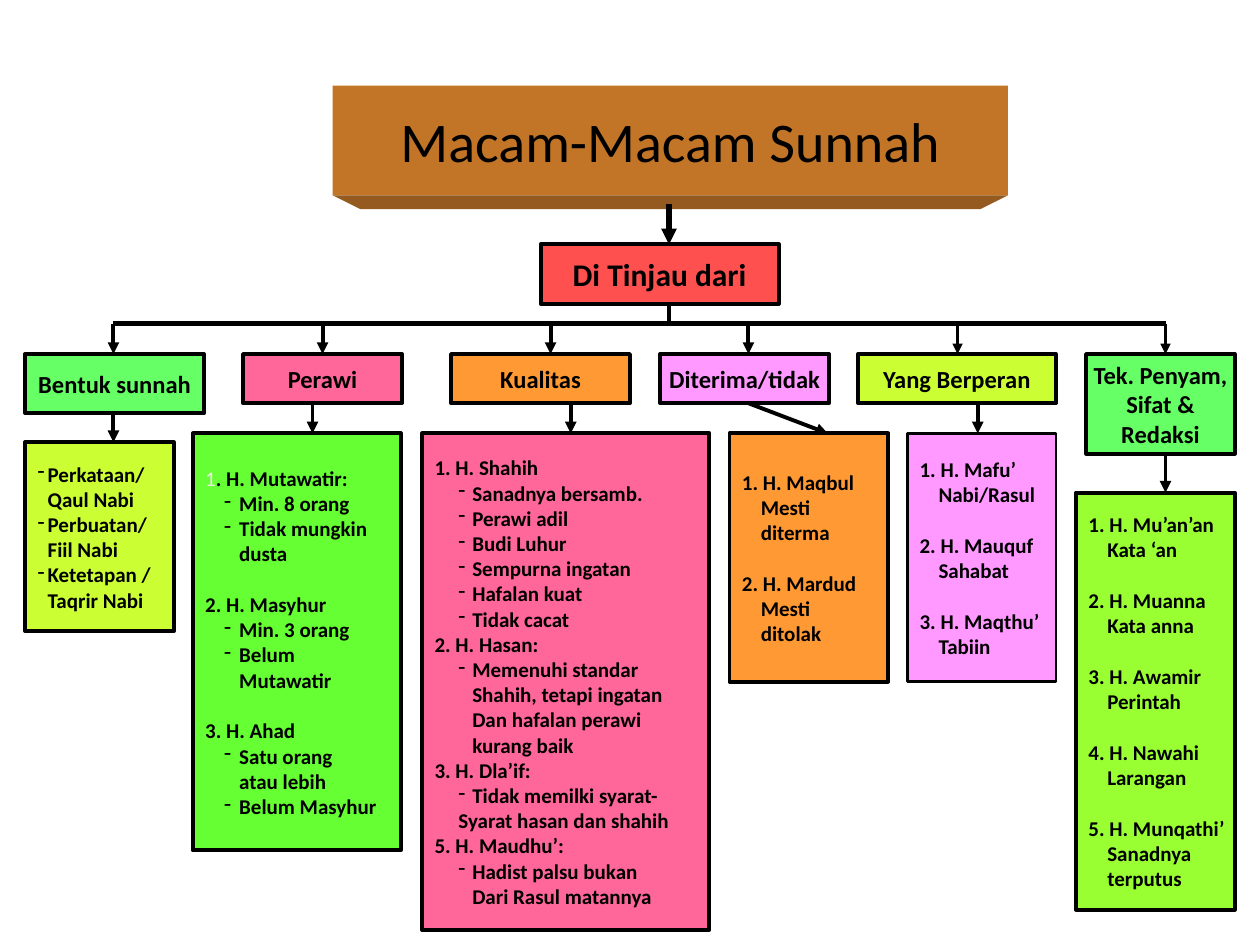
from dataclasses import dataclass
from lxml.etree import SubElement
from pptx import Presentation
from pptx.dml.color import RGBColor
from pptx.enum.shapes import MSO_CONNECTOR, MSO_SHAPE
from pptx.enum.text import MSO_ANCHOR, PP_ALIGN
from pptx.oxml.ns import qn
from pptx.util import Inches, Pt


@dataclass(frozen=True)
class Theme:
    font: str = "Calibri"
    ink: str = "000000"
    pale: str = "EEECE1"
    banner: str = "C27427"
    banner_edge: str = "945A1F"
    root: str = "FF5050"
    title_size: int = 32
    root_size: int = 18
    heading_size: int = 14
    body_size: int = 12
    group_gap: float = 14.6
    border: float = 2.25
    thick: float = 3
    thin: float = 1.5


THEME = Theme()
TITLE = "Macam-Macam Sunnah"
TITLE_BOX = (2.64, 0.68, 5.36, 0.87)
ROOT = "Di Tinjau dari"
ROOT_BOX = (4.29, 1.94, 1.89, 0.47)
CENTER_X, BUS_Y, HEADING_Y = 5.31, 2.57, 2.81

# Line kinds: "#" heading, "-" dashed item, ">" continuation, "=" aligned with dash.
BRANCHES = [
    dict(heading=["Bentuk sunnah"], box=(0.2, 1.42, 0.47), fill="66FF66",
         detail=(0.2, 3.51, 1.18, 1.5), detail_fill="CCFF33",
         drop=0.9, link=(0.9, 0.9), indents=(0, 0.08), lines=[
             "-Perkataan/", ">Qaul Nabi", "-Perbuatan/", ">Fiil Nabi",
             "-Ketetapan /", ">Taqrir Nabi"]),
    dict(heading=["Perawi"], box=(1.93, 1.26, 0.39), fill="FF6699",
         detail=(1.53, 3.44, 1.65, 3.31), detail_fill="66FF33",
         drop=2.56, link=(2.48, 2.48), indents=(0.15, 0.27), pale_number=True, lines=[
             "#1. H. Mutawatir:", "-Min. 8 orang", "-Tidak mungkin", ">dusta",
             "#2. H. Masyhur", "-Min. 3 orang", "-Belum", ">Mutawatir",
             "#3. H. Ahad", "-Satu orang", ">atau lebih", "-Belum Masyhur"]),
    dict(heading=["Kualitas"], box=(3.58, 1.42, 0.39), fill="FF9933",
         detail=(3.35, 3.44, 2.28, 3.94), detail_fill="FF6699",
         drop=4.37, link=(4.53, 4.53), indents=(0.19, 0.3), gap=0, lines=[
             "#1. H. Shahih", "-Sanadnya bersamb.", "-Perawi adil", "-Budi Luhur",
             "-Sempurna ingatan", "-Hafalan kuat", "-Tidak cacat",
             "#2. H. Hasan:", "-Memenuhi standar", ">Shahih, tetapi ingatan",
             ">Dan hafalan perawi", ">kurang baik",
             "#3. H. Dla’if:", "-Tidak memilki syarat-", "=Syarat hasan dan shahih",
             "#5. H. Maudhu’:", "-Hadist palsu bukan", ">Dari Rasul matannya"]),
    dict(heading=["Diterima/tidak"], box=(5.24, 1.34, 0.39), fill="FF99FF",
         detail=(5.79, 3.44, 1.26, 1.97), detail_fill="FF9933",
         drop=5.94, link=(5.94, 6.57), lines=[
             "#1. H. Maqbul", ">Mesti", ">diterma",
             "#2. H. Mardud", ">Mesti", ">ditolak"]),
    dict(heading=["Yang Berperan"], box=(6.81, 1.57, 0.39), fill="CCFF33",
         detail=(7.2, 3.44, 1.18, 1.97), detail_fill="FF99FF", detail_border=THEME.thin,
         drop=7.6, drop_width=THEME.thin, link=(7.76, 7.76), lines=[
             "#1. H. Mafu’", ">Nabi/Rasul", "#2. H. Mauquf", ">Sahabat",
             "#3. H. Maqthu’", ">Tabiin"]),
    dict(heading=["Tek. Penyam,", "Sifat &", "Redaksi"], box=(8.62, 1.18, 0.79),
         fill="66FF66", detail=(8.54, 3.91, 1.26, 3.31), detail_fill="99FF33",
         drop=9.25, drop_width=THEME.thin, link=(9.25, 9.25), lines=[
             "#1. H. Mu’an’an", ">Kata ‘an", "#2. H. Muanna", ">Kata anna",
             "#3. H. Awamir", ">Perintah", "#4. H. Nawahi", ">Larangan",
             "#5. H. Munqathi’", ">Sanadnya", ">terputus"]),
]


def color(value):
    return RGBColor.from_string(value)


def paint(shape, fill, border=None):
    shape.fill.solid()
    shape.fill.fore_color.rgb = color(fill)
    if border:
        shape.line.color.rgb = color(THEME.ink)
        shape.line.width = Pt(border)
    else:
        shape.line.fill.background()


def add_run(paragraph, text, size, bold=True, ink=THEME.ink):
    run = paragraph.add_run()
    run.text = text
    run.font.name = THEME.font
    run.font.size = Pt(size)
    run.font.bold = bold
    run.font.color.rgb = color(ink)


def paragraphs(frame, count):
    yield frame.paragraphs[0]
    for _ in range(count - 1):
        yield frame.add_paragraph()


def add_box(slide, box, fill, border=THEME.border):
    shape = slide.shapes.add_shape(MSO_SHAPE.RECTANGLE, *map(Inches, box))
    shape.shadow.inherit = False
    paint(shape, fill, border)
    shape.text_frame.vertical_anchor = MSO_ANCHOR.MIDDLE
    return shape.text_frame


def add_heading(slide, box, fill, lines, size):
    frame = add_box(slide, box, fill)
    frame.word_wrap = False
    for paragraph, text in zip(paragraphs(frame, len(lines)), lines):
        paragraph.alignment = PP_ALIGN.CENTER
        add_run(paragraph, text, size)


def add_detail(slide, branch):
    frame = add_box(slide, branch["detail"], branch["detail_fill"],
                    branch.get("detail_border", THEME.border))
    frame.word_wrap = True
    frame.margin_right = 0
    lines = branch["lines"]
    dash, text_left = branch.get("indents", (0.15, 0.15))
    for index, paragraph in enumerate(paragraphs(frame, len(lines))):
        kind, text = lines[index][0], lines[index][1:]
        left = {"#": 0, "=": dash}.get(kind, text_left)
        properties = paragraph._p.get_or_add_pPr()
        properties.set("marL", str(Inches(left)))
        properties.set("indent", str(Inches(dash - text_left) if kind == "-" else 0))
        if kind == "-":
            SubElement(properties, qn("a:buChar")).set("char", "-")
        else:
            SubElement(properties, qn("a:buNone"))
        paragraph.alignment = PP_ALIGN.LEFT
        if kind == "#" and index:
            paragraph.space_before = Pt(branch.get("gap", THEME.group_gap))
        if index == 0 and branch.get("pale_number"):
            add_run(paragraph, text[0], THEME.body_size, False, THEME.pale)
            text = text[1:]
        add_run(paragraph, text, THEME.body_size)


def add_line(slide, start, end, width=THEME.border, arrow=True):
    line = slide.shapes.add_connector(MSO_CONNECTOR.STRAIGHT, *map(Inches, start + end))
    line.line.color.rgb = color(THEME.ink)
    line.line.width = Pt(width)
    if arrow:
        SubElement(line.line._get_or_add_ln(), qn("a:tailEnd")).set("type", "triangle")
    SubElement(line._element.spPr, qn("a:effectLst"))


def add_banner(slide):
    title = slide.shapes.title
    title.left, title.top, title.width, title.height = map(Inches, TITLE_BOX)
    paint(title, THEME.banner)
    frame = title.text_frame
    frame.word_wrap = False
    frame.vertical_anchor = MSO_ANCHOR.MIDDLE
    frame.paragraphs[0].alignment = PP_ALIGN.CENTER
    add_run(frame.paragraphs[0], TITLE, THEME.title_size, False)
    left, top, width, height = TITLE_BOX
    right, bottom, inset, depth = left + width, top + height, 0.22, 0.11
    builder = slide.shapes.build_freeform(Inches(left), Inches(bottom))
    corners = [(right, bottom), (right - inset, bottom + depth), (left + inset, bottom + depth)]
    builder.add_line_segments([(Inches(x), Inches(y)) for x, y in corners], close=True)
    edge = builder.convert_to_shape()
    edge.shadow.inherit = False
    paint(edge, THEME.banner_edge)


def main():
    presentation = Presentation()
    presentation.slide_width, presentation.slide_height = Inches(10), Inches(7.5)
    slide = presentation.slides.add_slide(presentation.slide_layouts[5])
    add_banner(slide)
    add_heading(slide, ROOT_BOX, THEME.root, [ROOT], THEME.root_size)
    add_line(slide, (CENTER_X, 1.62), (CENTER_X, ROOT_BOX[1]), THEME.thick)
    add_line(slide, (CENTER_X, ROOT_BOX[1] + ROOT_BOX[3]), (CENTER_X, BUS_Y), arrow=False)
    add_line(slide, (BRANCHES[0]["drop"], BUS_Y), (BRANCHES[-1]["drop"], BUS_Y),
             THEME.thick, arrow=False)
    for branch in BRANCHES:
        left, width, height = branch["box"]
        add_heading(slide, (left, HEADING_Y, width, height), branch["fill"],
                    branch["heading"], THEME.heading_size)
        add_detail(slide, branch)
        drop, (start, end) = branch["drop"], branch["link"]
        add_line(slide, (drop, BUS_Y), (drop, HEADING_Y),
                 branch.get("drop_width", THEME.border))
        add_line(slide, (start, HEADING_Y + height), (end, branch["detail"][1]))
    presentation.save("out.pptx")


if __name__ == "__main__":
    main()
